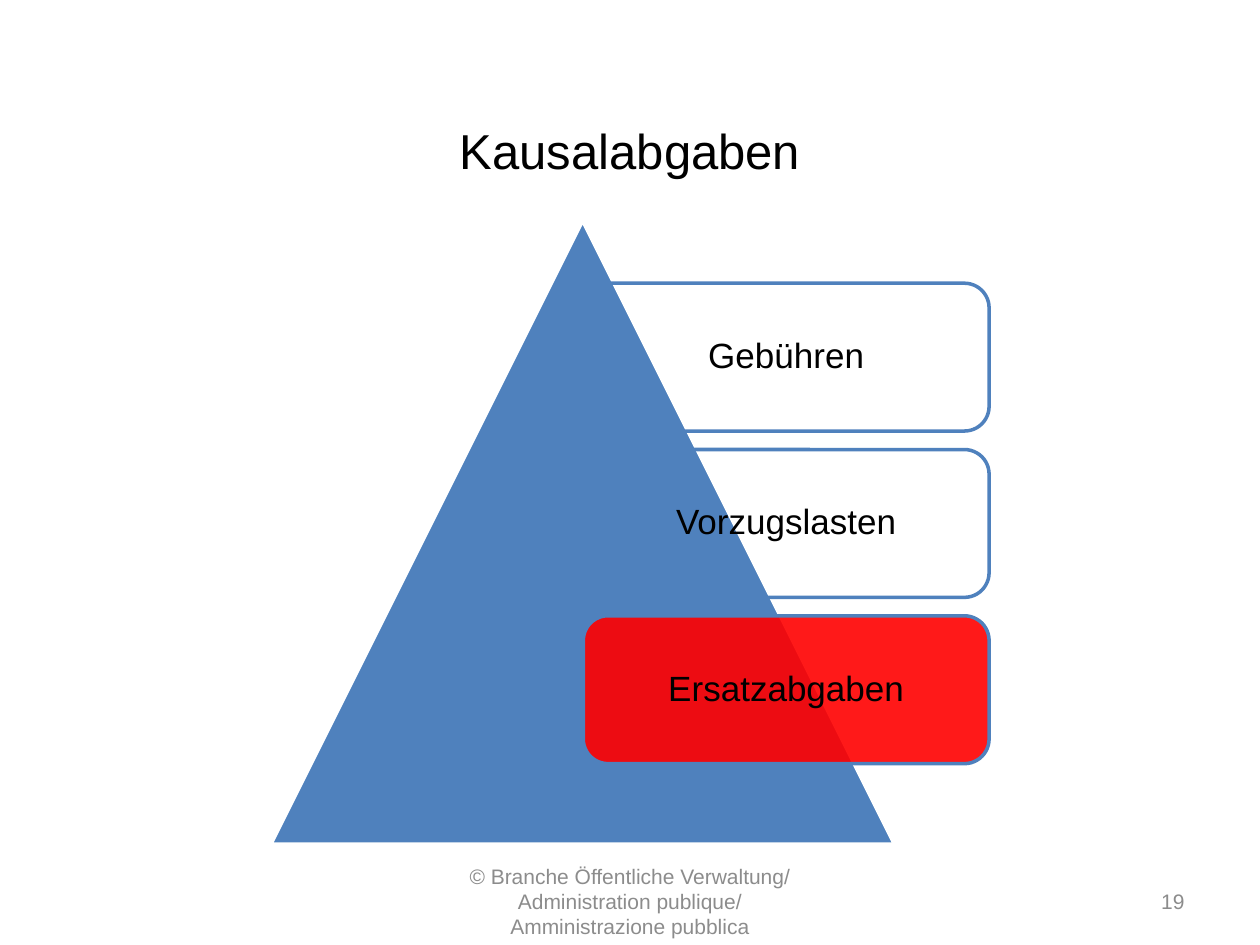
"""Build the slide "Kausalabgaben": a triangle with three kinds of levies."""
from lxml import etree
from pptx import Presentation
from pptx.dml.color import RGBColor
from pptx.enum import shapes, text
from pptx.oxml import ns
from pptx.util import Cm, Pt

BLACK = RGBColor(0x00, 0x00, 0x00)
WHITE = RGBColor(0xFF, 0xFF, 0xFF)
GREY = RGBColor(0x8C, 0x8C, 0x8C)
BLUE = RGBColor(0x4F, 0x81, 0xBD)
RED = RGBColor(0xFF, 0x00, 0x00)

CENTER, RIGHT = text.PP_ALIGN.CENTER, text.PP_ALIGN.RIGHT
LABELS = [
    ("Kausalabgaben", (1.27, 2.13, 22.86, 1.8), 28, BLACK, CENTER),
    ("19", (18.2, 17.66, 5.93, 1.01), 12, GREY, RIGHT),
    ("© Branche Öffentliche Verwaltung/ Administration publique/ "
     "Amministrazione pubblica", (8.68, 17.66, 8.04, 1.01), 12, GREY, CENTER),
]
LEVIES = [("Gebühren", None), ("Vorzugslasten", None), ("Ersatzabgaben", RED)]
TRIANGLE = (5.46, 4.45, 12.57, 12.57)
LEVY_LEFT, LEVY_TOP, LEVY_WIDTH, LEVY_HEIGHT = 11.76, 5.71, 8.18, 2.98
LEVY_STEP = LEVY_HEIGHT * 1.125


def write(shape, words, size, color, align):
    frame = shape.text_frame
    frame.text = words
    frame.word_wrap = True
    frame.vertical_anchor = text.MSO_ANCHOR.MIDDLE
    para = frame.paragraphs[0]
    para.alignment = align
    font = para.runs[0].font
    font.name, font.size = "Arial", Pt(size)
    font.color.rgb = color
    return frame


def add_figure(page, kind, place, fill, line):
    shape = page.shapes.add_shape(kind, *map(Cm, place))
    shape.shadow.inherit = False
    if fill is None:
        shape.fill.background()
    else:
        shape.fill.solid()
        shape.fill.fore_color.rgb = fill
    shape.line.color.rgb = line
    shape.line.width = Pt(2)
    return shape


def set_opacity(shape, percent):
    color = shape.fill._xPr.find(ns.qn("a:solidFill"))[0]
    etree.SubElement(color, ns.qn("a:alpha"), val=str(percent * 1000))


def main():
    deck = Presentation()
    deck.slide_width, deck.slide_height = Cm(25.4), Cm(19.05)
    page = deck.slides.add_slide(deck.slide_layouts[6])

    for words, place, size, color, align in LABELS:
        box = page.shapes.add_textbox(*map(Cm, place))
        write(box, words, size, color, align)

    kinds = shapes.MSO_SHAPE
    add_figure(page, kinds.ISOSCELES_TRIANGLE, TRIANGLE, BLUE, WHITE)
    for row, (words, fill) in enumerate(LEVIES):
        place = (LEVY_LEFT, LEVY_TOP + row * LEVY_STEP, LEVY_WIDTH, LEVY_HEIGHT)
        levy = add_figure(page, kinds.ROUNDED_RECTANGLE, place, fill, BLUE)
        if fill is not None:
            set_opacity(levy, 90)
        frame = write(levy, words, 20, BLACK, CENTER)
        frame.margin_left = frame.margin_right = Cm(0.2)
        frame.margin_top = frame.margin_bottom = Cm(0.2)
        frame.paragraphs[0].line_spacing = 0.9

    deck.save("out.pptx")


if __name__ == "__main__":
    main()
